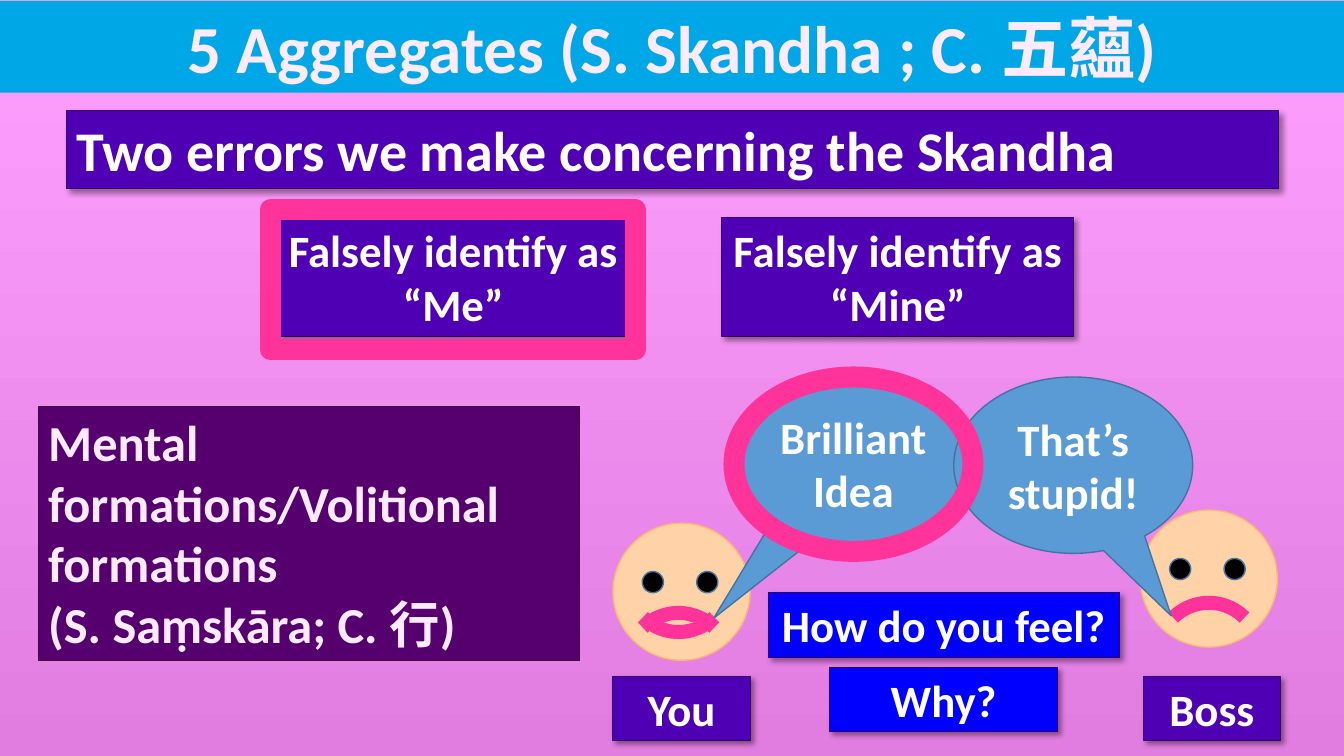
from lxml import etree
from pptx import Presentation
from pptx.dml.color import RGBColor
from pptx.enum.shapes import MSO_SHAPE
from pptx.enum.text import MSO_ANCHOR, MSO_AUTO_SIZE, PP_ALIGN
from pptx.oxml.ns import qn
from pptx.util import Pt

RECTANGLE = MSO_SHAPE.RECTANGLE
OVAL = MSO_SHAPE.OVAL
ARC = MSO_SHAPE.ARC
CALLOUT = MSO_SHAPE.OVAL_CALLOUT
TOP, MIDDLE = MSO_ANCHOR.TOP, MSO_ANCHOR.MIDDLE
LEFT, CENTER = PP_ALIGN.LEFT, PP_ALIGN.CENTER
GROW = MSO_AUTO_SIZE.SHAPE_TO_FIT_TEXT
TITLE_ONLY_LAYOUT = 5

EMU_PER_PX = 9144  # 100 px to the inch
FONT = "Calibri"
WHITE, PALE_PINK, HOT_PINK = "FFFFFF", "FFEBFF", "FF3399"
PURPLE, DARK_PURPLE, BLUE = "5000B4", "320064", "0000FF"
SKY, SKY_LINE = "5B9BD5", "43739E"
SMILE_ANGLE, FROWN_ANGLE = 135, 315


def px(length):
    return length * EMU_PER_PX


def color(hex_string):
    return RGBColor.from_string(hex_string)


def paint(shape, fill, line, line_width=1):
    """Set fill and outline; None leaves that part out."""
    if fill:
        shape.fill.solid()
        shape.fill.fore_color.rgb = color(fill)
    else:
        shape.fill.background()
    if line:
        shape.line.color.rgb = color(line)
        shape.line.width = Pt(line_width)
    else:
        shape.line.fill.background()


def write(shape, text, size, font_color=WHITE, alignment=CENTER, anchor=TOP):
    text_frame = shape.text_frame
    text_frame.text = text
    text_frame.word_wrap = True
    text_frame.vertical_anchor = anchor
    for paragraph in text_frame.paragraphs:
        paragraph.alignment = alignment
        for run in paragraph.runs:
            run.font.name = FONT
            run.font.size = Pt(size)
            run.font.bold = True
            run.font.color.rgb = color(font_color)


def add_plain(slide, kind, box, fill, line, line_width=1):
    shape = slide.shapes.add_shape(kind, *map(px, box))
    shape.shadow.inherit = False
    paint(shape, fill, line, line_width)
    return shape


def cast_shadow(shape):
    effects = shape._element.spPr.find(qn("a:effectLst"))
    shadow = etree.SubElement(
        effects, qn("a:outerShdw"), blurRad=str(Pt(4)), dist=str(Pt(3)),
        dir="2700000", algn="tl", rotWithShape="0")
    shade = etree.SubElement(shadow, qn("a:srgbClr"), val="000000")
    etree.SubElement(shade, qn("a:alpha"), val="40000")


def add_label(slide, box, text, fill=PURPLE, size=32, alignment=CENTER):
    label = add_plain(slide, RECTANGLE, box, fill, DARK_PURPLE, 0.75)
    cast_shadow(label)
    write(label, text, size, alignment=alignment)
    label.text_frame.auto_size = GROW


def add_face(slide, left, top):
    add_plain(slide, OVAL, (left, top, 136, 136), "FFD3A7", "FFB871")
    for eye_offset in (29, 83):
        eye = (left + eye_offset, top + 48, 21, 21)
        add_plain(slide, OVAL, eye, "000000", SKY_LINE)


def add_lip(slide, left, top, angle):
    lip = add_plain(slide, ARC, (left, top, 100, 100), None, HOT_PINK, 10)
    lip.rotation = angle


def add_speech(slide, box, text, tip):
    bubble = add_plain(slide, CALLOUT, box, SKY, SKY_LINE)
    bubble.adjustments[0], bubble.adjustments[1] = tip
    write(bubble, text, 32, anchor=MIDDLE)


def add_ring(slide, kind, box):
    add_plain(slide, kind, box, None, HOT_PINK, 15)


def set_background(slide):
    fill = slide.background.fill
    fill.gradient()
    fill.gradient_angle = 270
    for stop, stop_color in zip(fill.gradient_stops, ("FFA0FF", "E17DE1")):
        stop.color.rgb = color(stop_color)


def set_title(slide, text):
    title = slide.shapes.title
    title.left, title.top, title.width, title.height = map(px, (0, 1, 1333, 91))
    paint(title, "00A7E6", None)
    write(title, text, 48, PALE_PINK)
    title.text_frame.auto_size = GROW


def add_formations(slide):
    panel = add_plain(slide, RECTANGLE, (38, 403, 537, 252), "55006E", "3A003A", 0.75)
    write(panel, "Mental formations/Volitional formations\n(S. Saṃskāra; C. 行)",
          36, PALE_PINK, LEFT)
    panel.text_frame.auto_size = GROW


def main():
    presentation = Presentation()
    presentation.slide_width, presentation.slide_height = px(1333), px(750)
    slide = presentation.slides.add_slide(
        presentation.slide_layouts[TITLE_ONLY_LAYOUT])
    set_background(slide)
    set_title(slide, "5 Aggregates (S. Skandha ; C. 五蘊)")

    add_label(slide, (66, 110, 1202, 77),
              "Two errors we make concerning the Skandha", size=40, alignment=LEFT)
    for left, error in ((275, "Me"), (716, "Mine")):
        add_label(slide, (left, 216, 349, 118), f"Falsely identify as “{error}”")
    add_formations(slide)

    add_face(slide, 608, 519)
    add_lip(slide, 623, 527, SMILE_ANGLE)
    add_speech(slide, (728, 372, 237, 175), "Brilliant Idea", (-0.585, 0.879))
    add_face(slide, 1131, 506)
    add_lip(slide, 1149, 598, FROWN_ANGLE)
    for left, person in ((608, "You"), (1134, "Boss")):
        add_label(slide, (left, 671, 136, 64), person)
    add_speech(slide, (946, 374, 237, 175), "That’s stupid!", (0.41, 0.854))
    add_label(slide, (762, 588, 348, 64), "How do you feel?", BLUE)
    add_lip(slide, 623, 608, FROWN_ANGLE)
    add_label(slide, (823, 662, 226, 64), "Why?", BLUE)

    add_ring(slide, RECTANGLE, (268, 208, 362, 139))
    add_ring(slide, OVAL, (728, 374, 237, 173))
    presentation.save("out.pptx")


if __name__ == "__main__":
    main()
